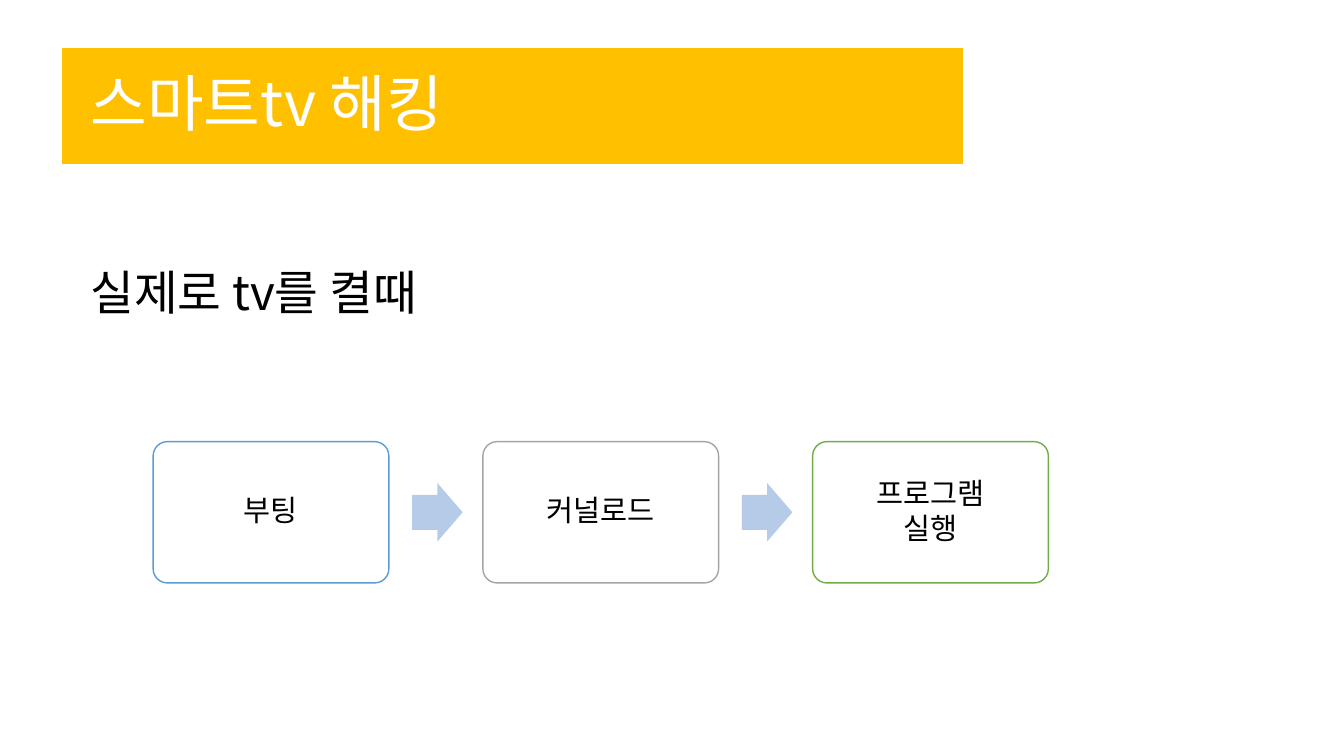
"""Build the smart TV hacking slide with its three-step start-up flow."""
from dataclasses import dataclass

from lxml import etree
from pptx import Presentation
from pptx.dml.color import RGBColor
from pptx.enum.shapes import MSO_SHAPE
from pptx.enum.text import MSO_ANCHOR, MSO_AUTO_SIZE, PP_ALIGN
from pptx.oxml.ns import qn
from pptx.shapes.autoshape import Shape
from pptx.slide import Slide
from pptx.text.text import TextFrame
from pptx.util import Cm, Pt

RECTANGLE = MSO_SHAPE.RECTANGLE
ROUNDED = MSO_SHAPE.ROUNDED_RECTANGLE
ARROW = MSO_SHAPE.RIGHT_ARROW
MIDDLE, TOP = MSO_ANCHOR.MIDDLE, MSO_ANCHOR.TOP
LEFT, CENTER = PP_ALIGN.LEFT, PP_ALIGN.CENTER
NO_AUTOFIT = MSO_AUTO_SIZE.NONE


@dataclass(frozen=True)
class Theme:
    """Colours, font and type sizes."""
    font: str = "Noto Sans CJK KR"
    white: str = "FFFFFF"
    black: str = "000000"
    banner: str = "FFC000"
    arrow: str = "B5CBE7"
    title_size: int = 44
    subtitle_size: int = 34
    step_size: int = 21


@dataclass(frozen=True)
class Area:
    """A rectangle in centimetres."""
    left: float
    top: float
    width: float
    height: float

    def lengths(self) -> tuple[Cm, Cm, Cm, Cm]:
        """Return the four values as lengths."""
        return Cm(self.left), Cm(self.top), Cm(self.width), Cm(self.height)


@dataclass(frozen=True)
class Step:
    """One step of the flow."""
    text: str
    outline: str


THEME = Theme()
STEPS = (
    Step("부팅", "5B9BD5"),
    Step("커널로드", "A5A5A5"),
    Step("프로그램\n실행", "70AD47"),
)
FIRST_STEP = Area(3.86, 11.13, 5.94, 3.56)
STEP_PITCH = 8.31
ARROW_OFFSET, ARROW_WIDTH, ARROW_HEIGHT = 6.53, 1.27, 1.47


def write_text(frame: TextFrame, text: str, size: int, color: str,
               align: PP_ALIGN, anchor: MSO_ANCHOR) -> None:
    """Fill a text frame and format all of its runs."""
    frame.text = text
    frame.word_wrap = True
    frame.auto_size = NO_AUTOFIT
    frame.vertical_anchor = anchor
    for para in frame.paragraphs:
        para.alignment = align
        for span in para.runs:
            span.font.size = Pt(size)
            span.font.name = THEME.font
            span.font.color.rgb = RGBColor.from_string(color)
            properties = span._r.get_or_add_rPr()
            etree.SubElement(properties, qn("a:ea"), typeface=THEME.font)


def add_box(page: Slide, kind: MSO_SHAPE, area: Area, fill: str,
            outline: str | None = None) -> Shape:
    """Add a flat preset shape, outlined when a colour is given."""
    box = page.shapes.add_shape(kind, *area.lengths())
    box.shadow.inherit = False
    box.fill.solid()
    box.fill.fore_color.rgb = RGBColor.from_string(fill)
    if outline:
        box.line.color.rgb = RGBColor.from_string(outline)
        box.line.width = Pt(1)
    else:
        box.line.fill.background()
    return box


def add_title(page: Slide) -> None:
    """Place the title over its banner."""
    banner = add_box(page, RECTANGLE, Area(1.55, 1.19, 22.73, 2.97),
                     THEME.banner, THEME.white)
    title = page.shapes.title
    title._element.addprevious(banner._element)
    title.left, title.top, title.width, title.height = Area(
        2.03, 0.84, 29.21, 3.68).lengths()
    write_text(title.text_frame, "스마트tv 해킹", THEME.title_size,
               THEME.white, LEFT, MIDDLE)
    title.text_frame.paragraphs[0].line_spacing = 0.9


def add_subtitle(page: Slide) -> None:
    """Add the line that introduces the flow."""
    box = page.shapes.add_textbox(*Area(2.03, 6.5, 29.77, 1.7).lengths())
    write_text(box.text_frame, "실제로 tv를 켤때", THEME.subtitle_size,
               THEME.black, LEFT, TOP)


def add_step(page: Slide, step: Step, area: Area) -> None:
    """Add one rounded step with centred text."""
    box = add_box(page, ROUNDED, area, THEME.white, step.outline)
    box.adjustments[0] = 0.1
    frame = box.text_frame
    write_text(frame, step.text, THEME.step_size, THEME.black, CENTER, MIDDLE)
    frame.margin_left = frame.margin_right = Cm(0.34)
    frame.margin_top = frame.margin_bottom = Cm(0.34)
    for para in frame.paragraphs:
        para.line_spacing = 0.9
        para.space_after = Pt(2.6)


def add_flow(page: Slide) -> None:
    """Lay out the steps at an equal pitch with arrows between them."""
    first = FIRST_STEP
    arrow_top = first.top + (first.height - ARROW_HEIGHT) / 2
    for index, step in enumerate(STEPS):
        left = first.left + index * STEP_PITCH
        if index:
            arrow_left = left - STEP_PITCH + ARROW_OFFSET
            arrow = add_box(page, ARROW, Area(arrow_left, arrow_top, ARROW_WIDTH,
                                              ARROW_HEIGHT), THEME.arrow)
            arrow.adjustments[0] = 0.6
            arrow.adjustments[1] = 0.5
        add_step(page, step, Area(left, first.top, first.width, first.height))


def main() -> None:
    """Build and save the deck."""
    deck = Presentation()
    deck.slide_width, deck.slide_height = Cm(33.87), Cm(19.05)
    page = deck.slides.add_slide(deck.slide_layouts.get_by_name("Title Only"))
    add_title(page)
    add_subtitle(page)
    add_flow(page)
    deck.save("out.pptx")


if __name__ == "__main__":
    main()
